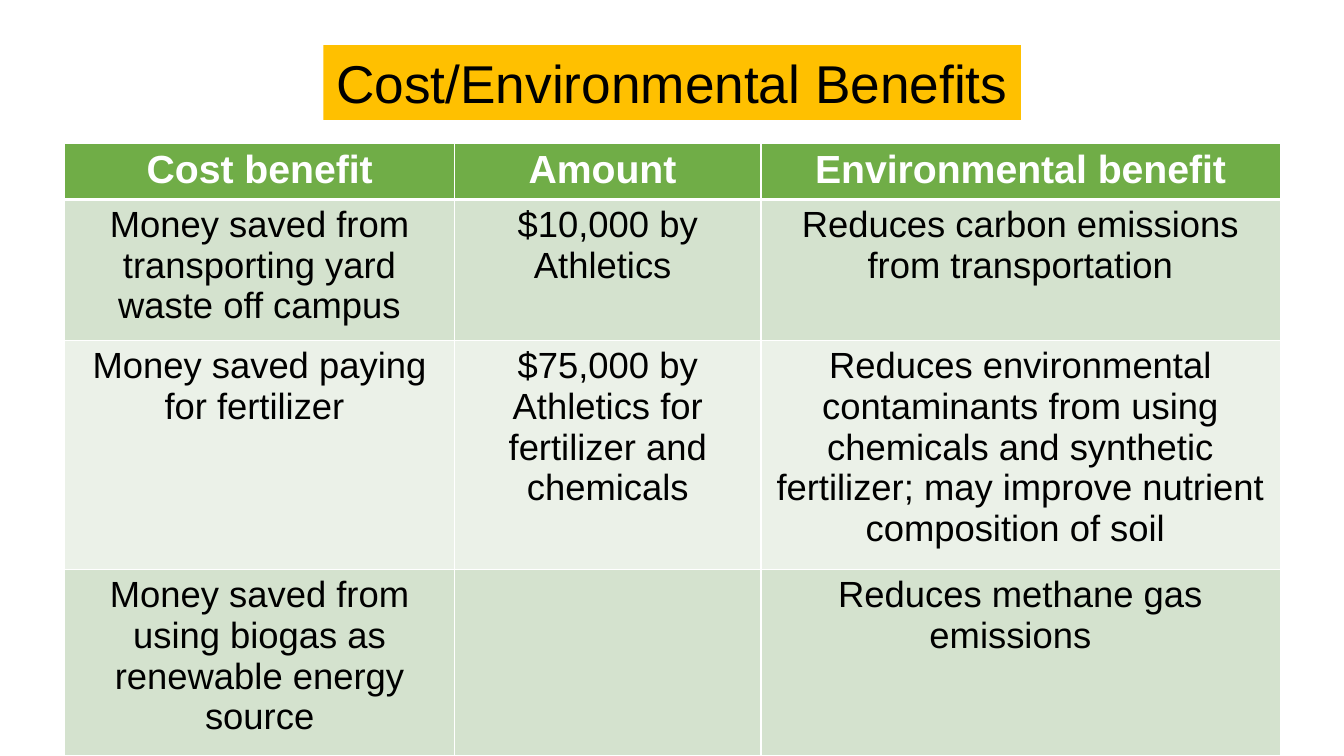
from pptx import Presentation
from pptx.dml.color import RGBColor
from pptx.enum.text import MSO_ANCHOR, PP_ALIGN
from pptx.oxml import parse_xml
from pptx.oxml.ns import nsdecls
from pptx.util import Cm, Pt

FONT = "Arial"
WHITE, BLACK = "FFFFFF", "000000"
GOLD, GREEN = "FFC000", "70AD47"
BANDS = ["D4E2CE", "EBF1E8"]

COL_WIDTHS = [9.83, 7.72, 13.08]
ROW_HEIGHTS = [1.42, 3.56, 5.77, 4.67]
BENEFITS = [
    ["Cost benefit", "Amount ", "Environmental benefit"],
    ["Money saved from transporting yard waste off campus",
     "$10,000 by Athletics ",
     "Reduces carbon emissions from transportation"],
    ["Money saved paying for fertilizer ",
     "$75,000 by Athletics for fertilizer and chemicals",
     "Reduces environmental contaminants from using chemicals and synthetic "
     "fertilizer; may improve nutrient composition of soil "],
    ["Money saved from using biogas as renewable energy source",
     "",
     "Reduces methane gas emissions  "],
]


def rgb(color):
    return RGBColor.from_string(color)


def set_fill(target, color):
    target.fill.solid()
    target.fill.fore_color.rgb = rgb(color)


def write(tf, text, size, color, bold=False):
    p = tf.paragraphs[0]
    p.alignment = PP_ALIGN.CENTER
    if not text:
        p.font.size = Pt(size)
        return
    r = p.add_run()
    r.text = text
    r.font.name = FONT
    r.font.size = Pt(size)
    r.font.bold = bold
    r.font.color.rgb = rgb(color)


def set_borders(cell, bottom):
    """Draw white cell edges, 1 pt except for the given bottom width."""
    tc_pr = cell._tc.get_or_add_tcPr()
    for side, width in zip("LRTB", [1, 1, 1, bottom]):
        tc_pr.append(parse_xml(
            f'<a:ln{side} {nsdecls("a")} w="{Pt(width)}"><a:solidFill>'
            f'<a:srgbClr val="{WHITE}"/></a:solidFill></a:ln{side}>'))


def add_title(s, text):
    sp = s.shapes.title
    sp.left, sp.top, sp.width, sp.height = Cm(8.15), Cm(1.14), Cm(17.58), Cm(1.88)
    set_fill(sp, GOLD)
    tf = sp.text_frame
    tf.word_wrap = False
    tf.vertical_anchor = MSO_ANCHOR.MIDDLE
    write(tf, text, 38, BLACK)


def add_benefit_table(s):
    frame = s.shapes.add_table(len(BENEFITS), len(COL_WIDTHS), Cm(1.63), Cm(3.61),
                               Cm(sum(COL_WIDTHS)), Cm(sum(ROW_HEIGHTS)))
    table = frame.table
    for col, width in zip(table.columns, COL_WIDTHS):
        col.width = Cm(width)
    for i, (row, height) in enumerate(zip(table.rows, ROW_HEIGHTS)):
        row.height = Cm(height)
        header = i == 0
        for cell, text in zip(row.cells, BENEFITS[i]):
            set_borders(cell, 3 if header else 1)
            set_fill(cell, GREEN if header else BANDS[(i - 1) % 2])
            write(cell.text_frame, text, 28 if header else 26,
                  WHITE if header else BLACK, header)


def main():
    prs = Presentation()
    prs.slide_width, prs.slide_height = Cm(33.87), Cm(19.05)
    s = prs.slides.add_slide(prs.slide_layouts[5])
    add_title(s, "Cost/Environmental Benefits")
    add_benefit_table(s)
    prs.save("out.pptx")


if __name__ == "__main__":
    main()
